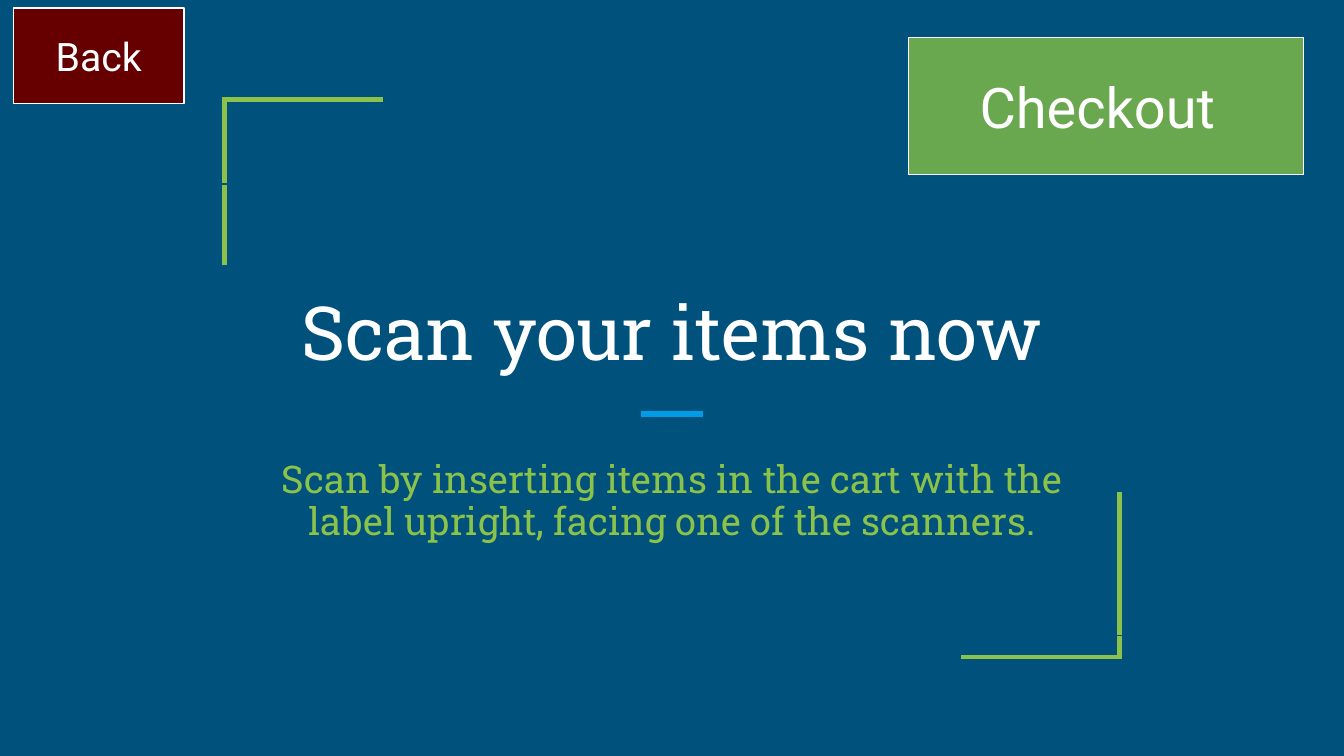
from lxml import etree
from pptx import Presentation
from pptx.dml.color import RGBColor
from pptx.enum.shapes import MSO_CONNECTOR, MSO_SHAPE
from pptx.enum.text import MSO_ANCHOR, PP_ALIGN
from pptx.oxml.ns import qn
from pptx.util import Inches, Pt

RECT, STRAIGHT = MSO_SHAPE.RECTANGLE, MSO_CONNECTOR.STRAIGHT
LEFT, CENTER = PP_ALIGN.LEFT, PP_ALIGN.CENTER
TOP, BOTTOM = MSO_ANCHOR.TOP, MSO_ANCHOR.BOTTOM

COLORS = {"navy": "00517C", "lime": "8BC34A", "blue": "039BE5",
          "green": "6AA84F", "maroon": "660000", "white": "FFFFFF"}

# Content: boxes are (left, top, width, height) in inches
TITLE = ("Scan your items now", (1.84, 1.3, 6.32, 1.59))
SUBTITLE = ("Scan by inserting items in the cart with the label upright, "
            "facing one of the scanners.", (1.84, 3.33, 6.32, 0.99))
BUTTONS = [  # label, button box, label box, fill, size, alignment
    ("Checkout", (6.76, 0.28, 2.94, 1.02), (7.19, 0.44, 2.4, 0.71), "green", 30, LEFT),
    ("Back", (0.1, 0.06, 1.27, 0.71), (0.28, 0.14, 0.91, 0.56), "maroon", 21, CENTER),
]
CORNERS = [(1.67, 0.74, 1), (8.33, 4.89, -1)]  # corner x, y, direction of arms
ARM_X, ARM_Y = 1.18, 1.23
DIVIDER = (4.77, 5.23, 3.08)  # from x, to x, y
FRAME = (0.37, 1.37, 9.42, 3.36)


def rgb(name):
    return RGBColor.from_string(COLORS[name])


def inches(values):
    return [Inches(v) for v in values]


def set_line(sp, color, width):
    sp.line.color.rgb = rgb(color)
    sp.line.width = Pt(width)


def add_rect(box, line, fill=None):
    sp = s.shapes.add_shape(RECT, *inches(box))
    sp.shadow.inherit = False
    if fill:
        sp.fill.solid()
        sp.fill.fore_color.rgb = rgb(fill)
    else:
        sp.fill.background()
    set_line(sp, line, 0.75)


def add_text(text, box, font, size, color, align=CENTER, anchor=TOP, spacing=None):
    tf = s.shapes.add_textbox(*inches(box)).text_frame
    tf.word_wrap = True
    tf.vertical_anchor = anchor
    tf.margin_left = tf.margin_right = tf.margin_top = tf.margin_bottom = Inches(0.1)
    tf.text = text
    p = tf.paragraphs[0]
    p.alignment = align
    p.line_spacing = spacing
    r = p.runs[0]
    r.font.name, r.font.size = font, Pt(size)
    r.font.color.rgb = rgb(color)


# Widescreen slide, 16:9
prs = Presentation()
prs.slide_width = Inches(10)
prs.slide_height = prs.slide_width * 9 // 16
s = prs.slides.add_slide(prs.slide_layouts[6])
s.background.fill.solid()
s.background.fill.fore_color.rgb = rgb("navy")

# Corner brackets with square joins
for x, y, way in CORNERS:
    builder = s.shapes.build_freeform(Inches(x), Inches(y + way * ARM_Y))
    points = [inches((x, y)), inches((x + way * ARM_X, y))]
    builder.add_line_segments(points, close=False)
    sp = builder.convert_to_shape()
    sp.shadow.inherit = False
    sp.fill.background()
    set_line(sp, "lime", 2.25)
    etree.SubElement(sp._element.spPr.find(qn("a:ln")), qn("a:miter"), lim="800000")

# Divider
x1, x2, y = inches(DIVIDER)
divider = s.shapes.add_connector(STRAIGHT, x1, y, x2, y)
set_line(divider, "blue", 3)
etree.SubElement(divider._element.spPr, qn("a:effectLst"))

# Title and subtitle
add_text(*TITLE, "Roboto Slab", 40, "white", anchor=BOTTOM)
add_text(*SUBTITLE, "Roboto Slab", 20.4, "lime", spacing=0.9)

# Buttons
for label, box, label_box, fill, size, align in BUTTONS:
    add_rect(box, "white", fill)
    add_text(label, label_box, "Roboto", size, "white", align)

# Thin frame in the background colour
add_rect(FRAME, "navy")

prs.save("out.pptx")
